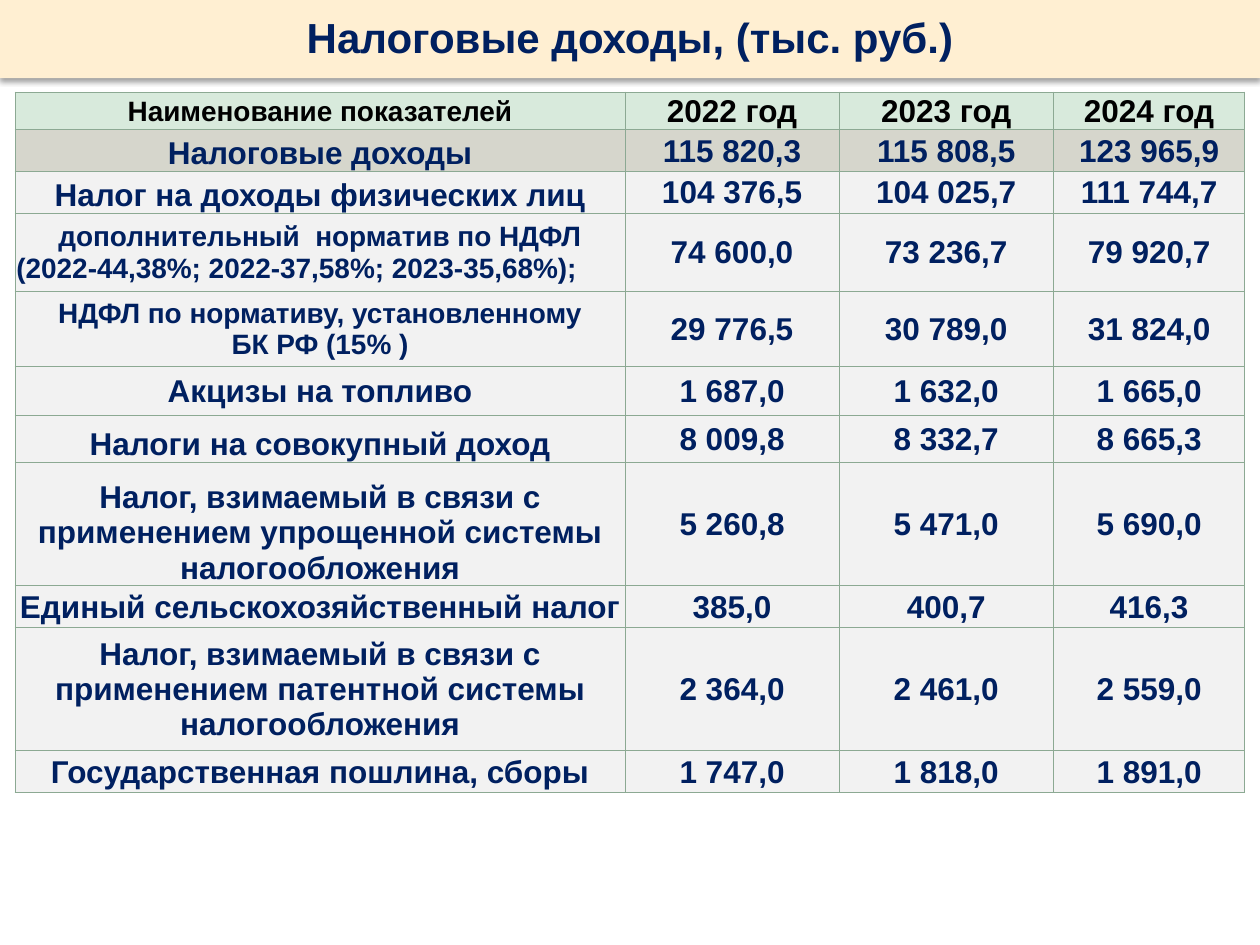
from dataclasses import dataclass

from lxml import etree
from pptx import Presentation
from pptx.dml.color import RGBColor
from pptx.enum.shapes import MSO_SHAPE
from pptx.enum.text import MSO_ANCHOR, PP_ALIGN
from pptx.oxml.ns import qn
from pptx.util import Inches, Pt

RECTANGLE = MSO_SHAPE.RECTANGLE
TOP, MIDDLE, BOTTOM = MSO_ANCHOR.TOP, MSO_ANCHOR.MIDDLE, MSO_ANCHOR.BOTTOM
LEFT, CENTER = PP_ALIGN.LEFT, PP_ALIGN.CENTER


@dataclass(frozen=True)
class Theme:
    font: str = "Arial"
    navy: str = "002060"
    black: str = "000000"
    banner: str = "FFEFD2"
    header: str = "D8EADC"
    total: str = "D6D6CC"
    body: str = "F2F2F2"
    border: str = "8CA993"
    title_size: int = 24
    body_size: int = 18
    small_size: int = 16
    border_width: float = 0.5
    cell_inset: float = 0.01


@dataclass(frozen=True)
class Row:
    height: float
    name: str
    values: tuple
    anchor: int = MIDDLE
    small: bool = False
    last_align: int = CENTER


class SlideBuilder:
    def __init__(self, deck, theme, columns, rows):
        self.theme = theme
        self.column = deck.slide_width / columns
        self.row = deck.slide_height / rows
        self.page = deck.slides.add_slide(deck.slide_layouts[6])

    def across(self, columns):
        return round(self.column * columns)

    def down(self, rows):
        return round(self.row * rows)

    def set_text(self, frame, text, size, color):
        frame.word_wrap = True
        frame.text = text
        for para in frame.paragraphs:
            para.alignment = CENTER
            for span in para.runs:
                span.font.name = self.theme.font
                span.font.size = Pt(size)
                span.font.bold = True
                span.font.color.rgb = RGBColor.from_string(color)

    def add_shadow(self, shape, blur, distance, opacity):
        shape.shadow.inherit = False
        effects = shape._element.spPr.find(qn("a:effectLst"))
        shadow = etree.SubElement(
            effects, qn("a:outerShdw"), blurRad=str(Pt(blur)),
            dist=str(Pt(distance)), dir="5400000", rotWithShape="0")
        tone = etree.SubElement(shadow, qn("a:srgbClr"), val=self.theme.black)
        etree.SubElement(tone, qn("a:alpha"), val=str(opacity * 1000))

    def banner(self, text, columns, rows):
        box = self.page.shapes.add_shape(
            RECTANGLE, 0, 0, self.across(columns), self.down(rows))
        box.fill.solid()
        box.fill.fore_color.rgb = RGBColor.from_string(self.theme.banner)
        box.line.fill.background()
        self.add_shadow(box, blur=3.1, distance=2, opacity=38)
        frame = box.text_frame
        frame.vertical_anchor = TOP
        frame.margin_top = Inches(0.09)
        self.set_text(frame, text, self.theme.title_size, self.theme.navy)

    def add_borders(self, cell):
        properties = cell._tc.get_or_add_tcPr()
        for side in ("lnL", "lnR", "lnT", "lnB"):
            line = etree.SubElement(properties, qn(f"a:{side}"),
                                    w=str(Pt(self.theme.border_width)))
            fill = etree.SubElement(line, qn("a:solidFill"))
            etree.SubElement(fill, qn("a:srgbClr"), val=self.theme.border)

    def fill_cell(self, cell, text, size, color, fill, anchor):
        inset = Inches(self.theme.cell_inset)
        cell.margin_left = cell.margin_right = cell.margin_top = inset
        cell.margin_bottom = 0
        cell.vertical_anchor = anchor
        self.add_borders(cell)
        cell.fill.solid()
        cell.fill.fore_color.rgb = RGBColor.from_string(fill)
        self.set_text(cell.text_frame, text, size, color)

    def table(self, left, top, widths, records):
        theme = self.theme
        height = sum(record.height for record in records)
        table = self.page.shapes.add_table(
            len(records), len(widths), self.across(left), self.down(top),
            self.across(sum(widths)), self.down(height)).table
        table.first_row = table.horz_banding = False
        for column, width in zip(table.columns, widths):
            column.width = self.across(width)
        fills = [theme.header, theme.total] + [theme.body] * (len(records) - 2)
        for index, (record, fill) in enumerate(zip(records, fills)):
            table.rows[index].height = self.down(record.height)
            color = theme.navy if index else theme.black
            size = theme.small_size if record.small else theme.body_size
            name = table.cell(index, 0)
            self.fill_cell(name, record.name, size, color, fill, record.anchor)
            name.text_frame.paragraphs[-1].alignment = record.last_align
            for position, value in enumerate(record.values, start=1):
                self.fill_cell(table.cell(index, position), value,
                               theme.body_size, color, fill, MIDDLE)


RECORDS = [
    Row(3, "Наименование показателей",
        ("2022 год", "2023 год", "2024 год"), small=True),
    Row(3.3, "Налоговые доходы",
        ("115 820,3", "115 808,5", "123 965,9"), BOTTOM),
    Row(3.3, "Налог на доходы физических лиц",
        ("104 376,5", "104 025,7", "111 744,7"), BOTTOM),
    Row(6.25, "дополнительный  норматив по НДФЛ\n"
        "(2022-44,38%; 2022-37,58%; 2023-35,68%);",
        ("74 600,0", "73 236,7", "79 920,7"), small=True, last_align=LEFT),
    Row(5.9, "НДФЛ по нормативу, установленному\nБК РФ (15% )",
        ("29 776,5", "30 789,0", "31 824,0"), small=True),
    Row(3.9, "Акцизы на топливо", ("1 687,0", "1 632,0", "1 665,0")),
    Row(3.75, "Налоги на совокупный доход",
        ("8 009,8", "8 332,7", "8 665,3"), BOTTOM),
    Row(9.8, "Налог, взимаемый в связи с применением "
        "упрощенной системы налогообложения",
        ("5 260,8", "5 471,0", "5 690,0"), BOTTOM),
    Row(3.3, "Единый сельскохозяйственный налог",
        ("385,0", "400,7", "416,3")),
    Row(9.8, "Налог, взимаемый в связи с применением "
        "патентной системы налогообложения",
        ("2 364,0", "2 461,0", "2 559,0")),
    Row(3.3, "Государственная пошлина, сборы",
        ("1 747,0", "1 818,0", "1 891,0")),
]


def main():
    deck = Presentation()
    deck.slide_width, deck.slide_height = Inches(10), Inches(7.5)
    builder = SlideBuilder(deck, Theme(), columns=100, rows=75)
    builder.table(1.2, 7.3, (48.4, 17, 17, 15.2), RECORDS)
    builder.banner("Налоговые доходы, (тыс. руб.)", 100, 6.2)
    deck.save("out.pptx")


if __name__ == "__main__":
    main()
